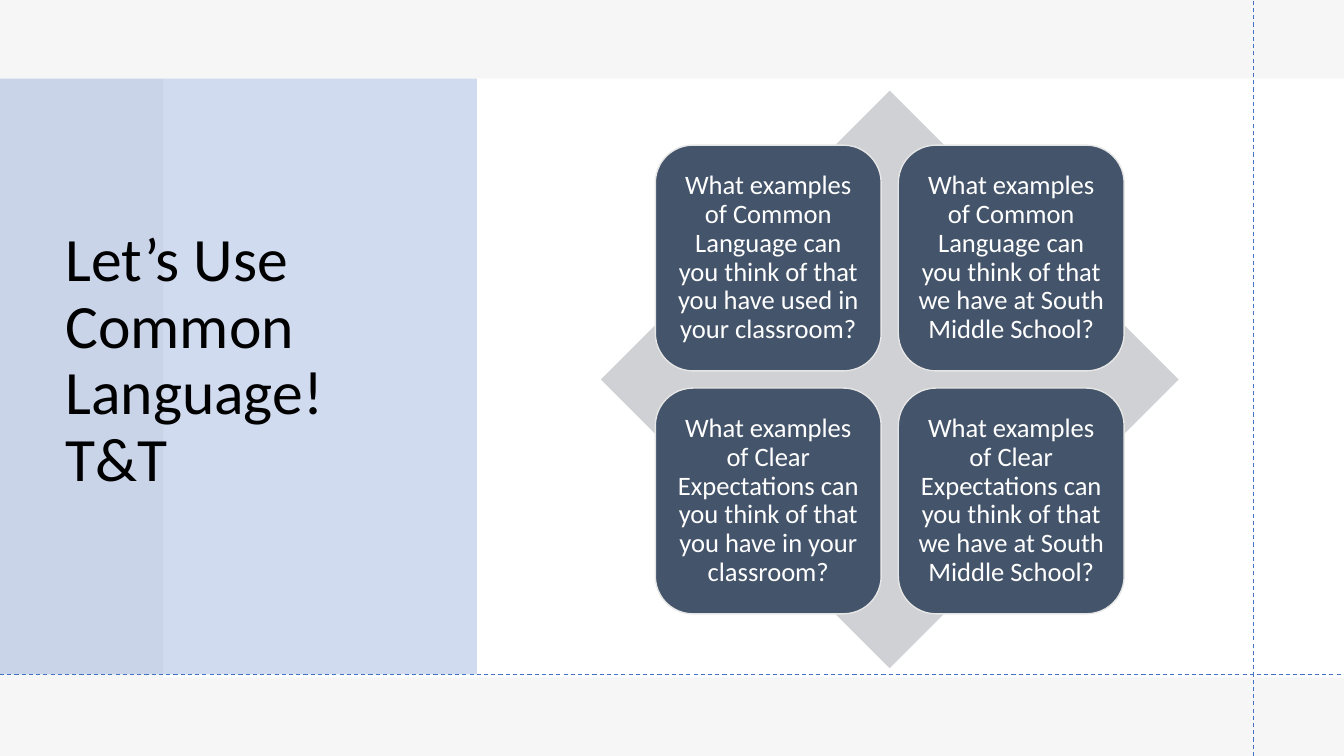
from pptx import Presentation
from pptx.dml.color import RGBColor
from pptx.enum.dml import MSO_LINE
from pptx.enum.shapes import MSO_CONNECTOR, MSO_SHAPE
from pptx.enum.text import MSO_ANCHOR, PP_ALIGN
from pptx.oxml.ns import qn
from pptx.util import Inches, Pt
from lxml import etree

RECT, DIAMOND, ROUND = MSO_SHAPE.RECTANGLE, MSO_SHAPE.DIAMOND, MSO_SHAPE.ROUNDED_RECTANGLE
STRAIGHT, DASH = MSO_CONNECTOR.STRAIGHT, MSO_LINE.DASH
MIDDLE, CENTER, LEFT = MSO_ANCHOR.MIDDLE, PP_ALIGN.CENTER, PP_ALIGN.LEFT
WIDE, HIGH = 13.33, 7.5
BLUE, GREY, WHITE = "4472C4", "E7E6E6", "FFFFFF"

deck = Presentation()
deck.slide_width, deck.slide_height = Inches(WIDE), Inches(HIGH)
slide = deck.slides.add_slide(deck.slide_layouts[6])
shapes = slide.shapes


def block(kind, x, y, w, h, color, alpha=100):
    """Add a filled shape without outline; alpha is its opacity in percent."""
    shape = shapes.add_shape(kind, Inches(x), Inches(y), Inches(w), Inches(h))
    shape.shadow.inherit = False
    shape.fill.solid()
    shape.fill.fore_color.rgb = RGBColor.from_string(color)
    shape.line.fill.background()
    if alpha < 100:
        tint = shape.fill._xPr.find(qn("a:solidFill"))[0]
        etree.SubElement(tint, qn("a:alpha")).set("val", str(alpha * 1000))
    return shape


def write(shape, text, size, color, align):
    frame = shape.text_frame
    frame.word_wrap = True
    frame.vertical_anchor = MIDDLE
    para = frame.paragraphs[0]
    para.text = text
    para.alignment = align
    para.line_spacing = 0.9
    for run in para.runs:
        run.font.size = Pt(size)
        run.font.name = "Calibri"
        run.font.color.rgb = RGBColor.from_string(color)


# Backdrop and title panel
top, base = 0.78, 6.69
block(RECT, 0, 0, WIDE, HIGH, WHITE)
block(RECT, 0, 0, WIDE, HIGH, GREY, 35)
block(RECT, 1.62, top, WIDE - 1.62, 5.94, WHITE)
block(RECT, 0, top, 4.73, base - top, BLUE, 25)

title = shapes.add_textbox(Inches(0.55), Inches(0.74), Inches(3.95), Inches(5.69))
write(title, "Let’s Use Common Language!\nT&T", 44, "000000", LEFT)

# Dashed guides
for x1, y1, x2, y2 in [(12.43, HIGH, 12.43, 0), (0, base, WIDE, base)]:
    guide = shapes.add_connector(STRAIGHT, Inches(x1), Inches(y1), Inches(x2), Inches(y2))
    guide.line.color.rgb = RGBColor.from_string(BLUE)
    guide.line.width = Pt(0.75)
    guide.line.dash_style = DASH
    etree.SubElement(guide._element.spPr, qn("a:effectLst"))

# Four questions on a diamond
block(DIAMOND, 5.96, 0.9, 5.73, 5.73, "CFD1D4")
side, step = 2.24, 2.41
topics = ["Common Language", "Clear Expectations"]
ends = [["you have used in your classroom", "we have at South Middle School"],
        ["you have in your classroom", "we have at South Middle School"]]
for row, topic in enumerate(topics):
    for col, end in enumerate(ends[row]):
        card = block(ROUND, 6.5 + col * step, 1.44 + row * step, side, side, "44546A")
        card.line.color.rgb = RGBColor.from_string(GREY)
        card.line.width = Pt(1)
        frame = card.text_frame
        frame.margin_left = frame.margin_right = Inches(0.08)
        frame.margin_top = frame.margin_bottom = Inches(0.08)
        write(card, f"What examples of {topic} can you think of that {end}?", 19, WHITE, CENTER)

deck.save("out.pptx")
